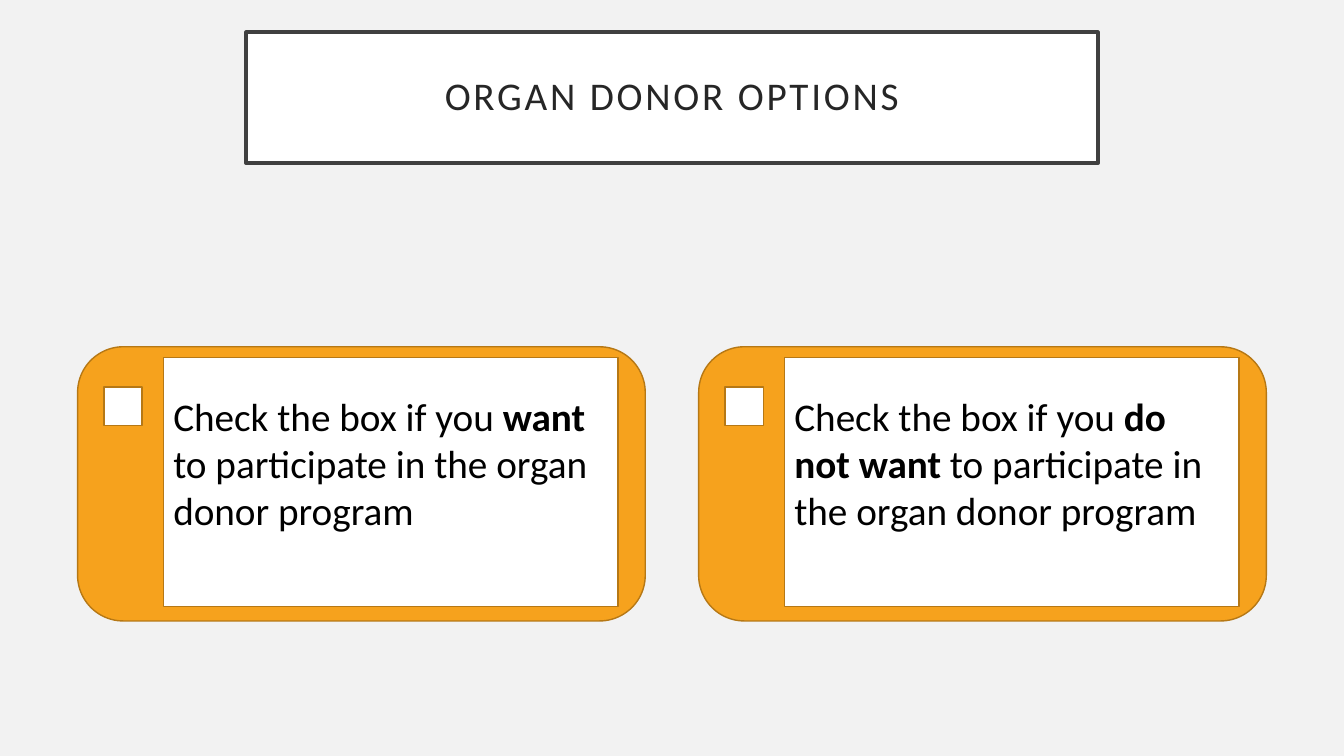
from pptx import Presentation
from pptx.dml.color import RGBColor
from pptx.enum.shapes import MSO_SHAPE
from pptx.enum.text import MSO_ANCHOR, PP_ALIGN
from pptx.util import Inches, Pt

COLORS = {"bg": "F2F2F2", "white": "FFFFFF", "frame": "404040", "title": "262626",
          "card": "F6A21D", "edge": "B67815", "text": "000000"}

prs = Presentation()
prs.slide_width, prs.slide_height = Inches(13.33), Inches(7.5)
s = prs.slides.add_slide(prs.slide_layouts[6])
s.background.fill.solid()
s.background.fill.fore_color.rgb = RGBColor.from_string(COLORS["bg"])


def add_box(kind, x, y, w, h, fill, line="edge", weight=1):
    sp = s.shapes.add_shape(kind, Inches(x), Inches(y), Inches(w), Inches(h))
    sp.shadow.inherit = False
    sp.fill.solid()
    sp.fill.fore_color.rgb = RGBColor.from_string(COLORS[fill])
    sp.line.color.rgb = RGBColor.from_string(COLORS[line])
    sp.line.width = Pt(weight)
    return sp


def add_text(p, text, color="text", bold=False, spacing=0):
    r = p.add_run()
    r.text = text
    r.font.name, r.font.size, r.font.bold = "Calibri", Pt(28), bold
    r.font.color.rgb = RGBColor.from_string(COLORS[color])
    if spacing:
        r.font._element.set("spc", str(spacing * 100))


# Title
title = add_box(MSO_SHAPE.RECTANGLE, 2.44, 0.32, 8.45, 1.3, "white", "frame", 2.5)
tf = title.text_frame
tf.word_wrap = True
tf.vertical_anchor = MSO_ANCHOR.MIDDLE
tf.margin_left = tf.margin_right = tf.margin_top = tf.margin_bottom = Inches(0.2)
p = tf.paragraphs[0]
p.alignment, p.line_spacing = PP_ALIGN.CENTER, 0.9
add_text(p, "ORGAN DONOR OPTIONS", color="title", spacing=2)

# Option cards: orange card, white panel, wording, checkbox
left, top, pitch = 0.77, 3.44, 6.16
for col, choice in enumerate(["want", "do not want"]):
    x = left + col * pitch
    add_box(MSO_SHAPE.ROUNDED_RECTANGLE, x, top, 5.63, 2.72, "card")
    add_box(MSO_SHAPE.RECTANGLE, x + 0.85, top + 0.11, 4.51, 2.47, "white")
    tb = s.shapes.add_textbox(Inches(x + 0.85), Inches(top + 0.4), Inches(4.51), Inches(1.51))
    tb.text_frame.word_wrap = True
    p = tb.text_frame.paragraphs[0]
    add_text(p, "Check the box if you ")
    add_text(p, choice, bold=True)
    add_text(p, " to participate in the organ donor program")
    add_box(MSO_SHAPE.RECTANGLE, x + 0.26, top + 0.4, 0.38, 0.38, "white")

prs.save("out.pptx")
